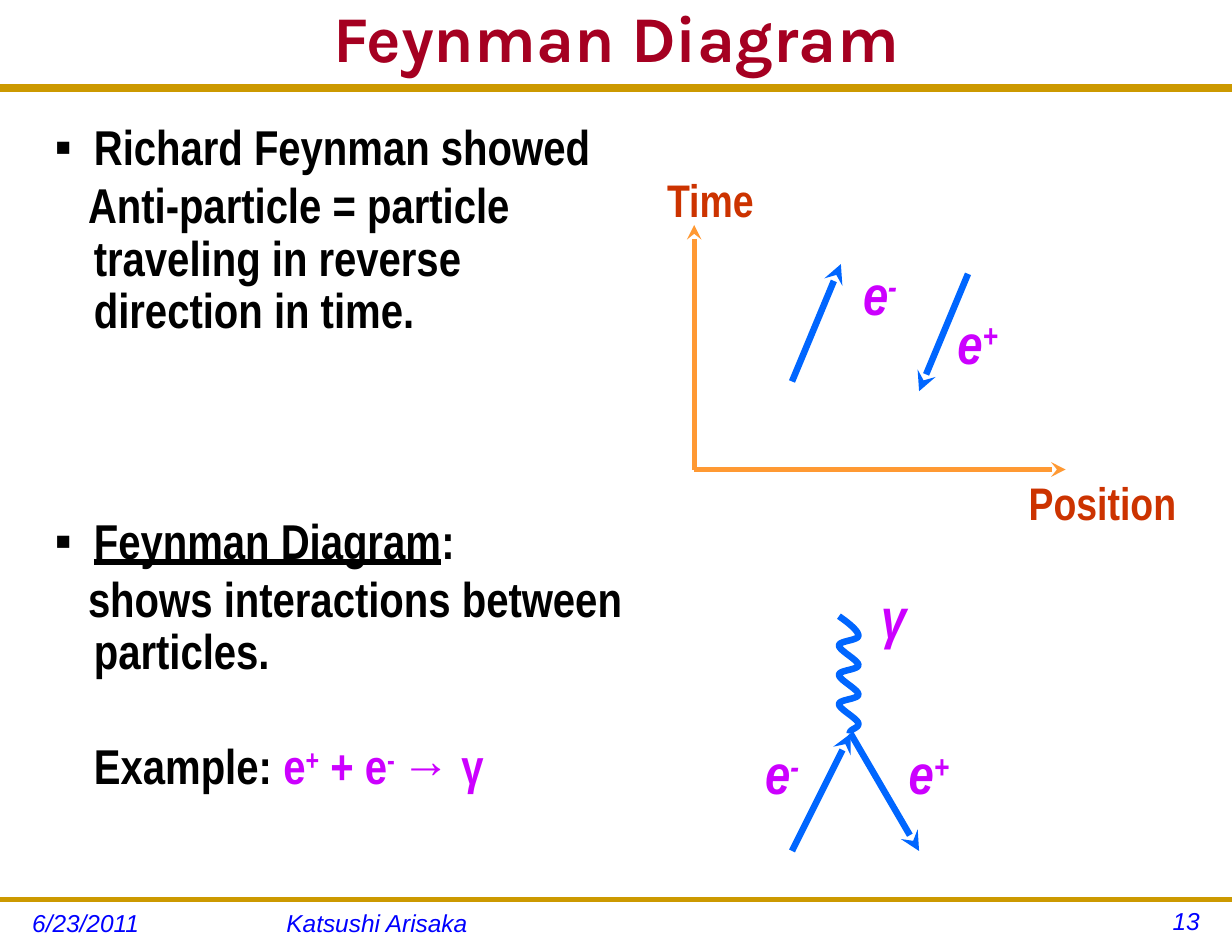
from itertools import pairwise

from lxml import etree
from pptx import Presentation
from pptx import util as u
from pptx.dml.color import RGBColor
from pptx.enum import shapes, text
from pptx.oxml.ns import qn

PX = 7620
COLORS = {
    "gold": "CC9900", "footer": "0000FF", "title": "A50021", "ink": "000000",
    "axis": "FF9933", "axis label": "CC3300", "particle": "CC00FF", "track": "0066FF",
}
NARROW = "Arial Narrow"


def px(*lengths):
    """Turn px lengths into EMU."""
    return [u.Emu(length * PX) for length in lengths]


def color(name):
    """Look up a named colour."""
    return RGBColor.from_string(COLORS[name])


def style(run, size, face, hue, bold=False, italic=False, raised=False):
    """Format one run."""
    font = run.font
    font.size, font.name = u.Pt(size), face
    font.bold, font.italic = bold, italic
    font.color.rgb = color(hue)
    if raised:
        run._r.get_or_add_rPr().set("baseline", "30000")


def place(shape, left, top, width, height):
    """Move a placeholder and give it the slide's insets."""
    shape.left, shape.top, shape.width, shape.height = px(left, top, width, height)
    frame = shape.text_frame
    frame.word_wrap = True
    frame.auto_size = text.MSO_AUTO_SIZE.NONE
    frame.margin_left, frame.margin_right = px(13, 13)
    frame.margin_top, frame.margin_bottom = px(6, 6)
    return frame


def add_title(slide, words):
    """Fill the title placeholder."""
    frame = place(slide.shapes.title, 20, 0, 1220, 90)
    frame.text = words
    frame.vertical_anchor = text.MSO_ANCHOR.MIDDLE
    heading = frame.paragraphs[0]
    heading.alignment, heading.line_spacing = text.PP_ALIGN.CENTER, 0.8
    style(heading.runs[0], 40, "Karla", "title", bold=True)


def add_point(paragraph, parts, indent, before, bullet=None):
    """Write one body paragraph from (words, colour, raised, underlined) parts."""
    paragraph.level = 1
    props = paragraph._p.get_or_add_pPr()
    props.set("marL", str(103 * PX))
    props.set("indent", str(indent * PX))
    if bullet:
        etree.SubElement(props, qn("a:buFont"), typeface="Arial")
        etree.SubElement(props, qn("a:buChar"), char=bullet)
    else:
        etree.SubElement(props, qn("a:buNone"))
    paragraph.alignment = text.PP_ALIGN.LEFT
    paragraph.line_spacing = 0.9
    paragraph.space_before = u.Pt(before)
    for words, hue, raised, underlined in parts:
        run = paragraph.add_run()
        run.text = words
        style(run, 30, NARROW, hue, bold=True, raised=raised)
        run.font.underline = underlined


def add_body(slide):
    """Fill the body placeholder."""
    frame = place(slide.placeholders[1], -20, 120, 680, 800)

    def plain(words):
        return words, "ink", False, False

    def formula(words, raised=False):
        return words, "particle", raised, False

    points = [
        ([plain("Richard Feynman showed")], -40, 0, "▪"),
        ([plain("Anti-particle = particle traveling in reverse direction in time.")], -6, 3),
        ([("Feynman Diagram", "ink", False, True), plain(":")], -40, 109, "▪"),
        ([plain("shows interactions between particles.")], -6, 3),
        ([plain("Example: "), formula("e"), formula("+", True), formula(" + e"),
          formula("- ", True), formula("→ γ")], 0, 38),
    ]
    for index, point in enumerate(points):
        paragraph = frame.add_paragraph() if index else frame.paragraphs[0]
        add_point(paragraph, *point)


def add_line(slide, start, end, hue, weight, arrow=False):
    """Draw a straight line, with an arrowhead at its end if asked."""
    line = slide.shapes.add_connector(shapes.MSO_CONNECTOR.STRAIGHT, *px(*start, *end))
    line.line.color.rgb = color(hue)
    line.line.width = u.Pt(weight)
    props = line._element.spPr
    if arrow:
        etree.SubElement(props.find(qn("a:ln")), qn("a:tailEnd"), type="stealth")
    etree.SubElement(props, qn("a:effectLst"))


def add_label(slide, box, words, size, hue, charge="", italic=False):
    """Place a centred label with an optional raised charge."""
    frame = slide.shapes.add_textbox(*px(*box)).text_frame
    frame.word_wrap = False
    frame.text = words
    label = frame.paragraphs[0]
    label.alignment = text.PP_ALIGN.CENTER
    style(label.runs[0], size, NARROW, hue, True, italic)
    if charge:
        sign = label.add_run()
        sign.text = charge
        style(sign, size, NARROW, hue, True, italic, raised=True)


def add_footer(slide, box, words, align=text.PP_ALIGN.LEFT):
    """Place one footer entry."""
    frame = place(slide.shapes.add_textbox(*px(*box)), *box)
    frame.text = words
    frame.paragraphs[0].alignment = align
    style(frame.paragraphs[0].runs[0], 15, "Arial", "footer", italic=True)


def bezier(start, leave, arrive, end, steps=10):
    """Sample a cubic curve in EMU, without its start."""
    return [
        tuple(PX * ((1 - t) ** 3 * a + 3 * t * (1 - t) ** 2 * b
                    + 3 * t * t * (1 - t) * c + t ** 3 * d)
              for a, b, c, d in zip(start, leave, arrive, end))
        for t in (step / steps for step in range(1, steps + 1))
    ]


def add_photon(slide):
    """Draw the wavy photon track down to the vertex."""
    left, right, top = 858, 878, 630
    turns = [(x, top + 30 * i + dy) for i in range(4) for x, dy in ((left, 0), (right, 20))]
    turns.append((869, 750))
    points = []
    for (x0, y0), (x1, y1) in pairwise(turns):
        leave = (x0, y0 + 5) if points else (x0 + 10, y0 + 7)
        points += bezier((x0, y0), leave, (x1, y1 - 5), (x1, y1))
    builder = slide.shapes.build_freeform(left * PX, top * PX)
    builder.add_line_segments(points, close=False)
    photon = builder.convert_to_shape()
    photon.shadow.inherit = False
    photon.fill.background()
    photon.line.color.rgb = color("track")
    photon.line.width = u.Pt(4)


def main():
    """Build the slide and save it."""
    deck = Presentation()
    deck.slide_width, deck.slide_height = px(1260, 960)
    slide = deck.slides.add_slide(deck.slide_layouts[1])

    for y, weight in ((90, 4.5), (920, 3)):
        add_line(slide, (0, y), (1260, y), "gold", weight)
    add_footer(slide, (20, 922, 250, 38), "6/23/2011")
    add_footer(slide, (280, 922, 730, 38), "Katsushi Arisaka")
    add_footer(slide, (1020, 920, 220, 40), "13", text.PP_ALIGN.RIGHT)
    add_title(slide, "Feynman Diagram")
    add_body(slide)

    origin = (710, 480)
    for tip in ((1090, 480), (710, 230)):
        add_line(slide, origin, tip, "axis", 3, arrow=True)
    add_label(slide, (1040, 480, 175, 68), "Position", 28, "axis label")
    add_label(slide, (670, 170, 113, 68), "Time", 28, "axis label")

    vertex = (870, 750)
    tracks = [
        ((810, 390), (860, 270)), ((990, 280), (940, 400)),
        ((810, 870), vertex), (vertex, (940, 870)),
    ]
    for start, end in tracks:
        add_line(slide, start, end, "track", 4, arrow=True)
    add_photon(slide)

    particles = [
        (870, 260, 60, "e", "-"), (966, 310, 68, "e", "+"),
        (770, 750, 60, "e", "-"), (916, 750, 68, "e", "+"), (880, 590, 68, "γ", ""),
    ]
    for x, y, width, symbol, charge in particles:
        add_label(slide, (x, y, width, 80), symbol, 34, "particle", charge, italic=True)

    deck.save("out.pptx")


if __name__ == "__main__":
    main()
